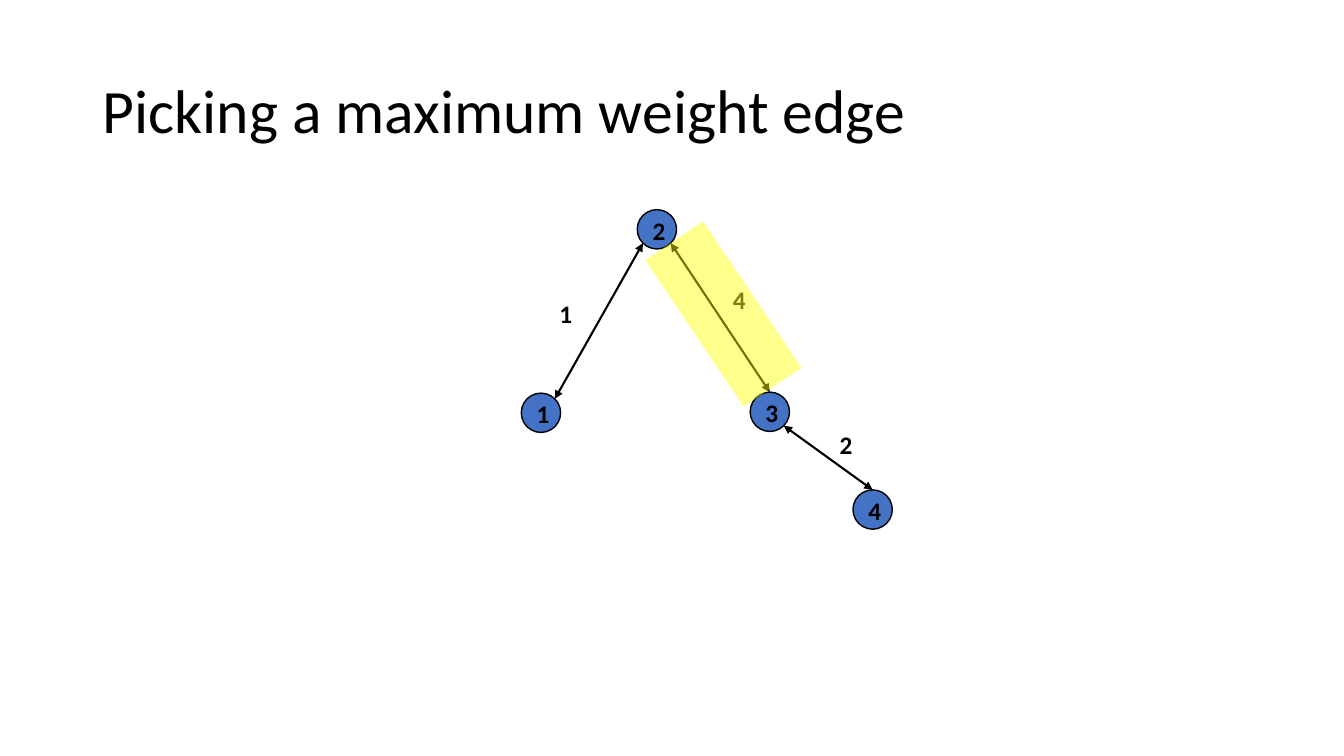
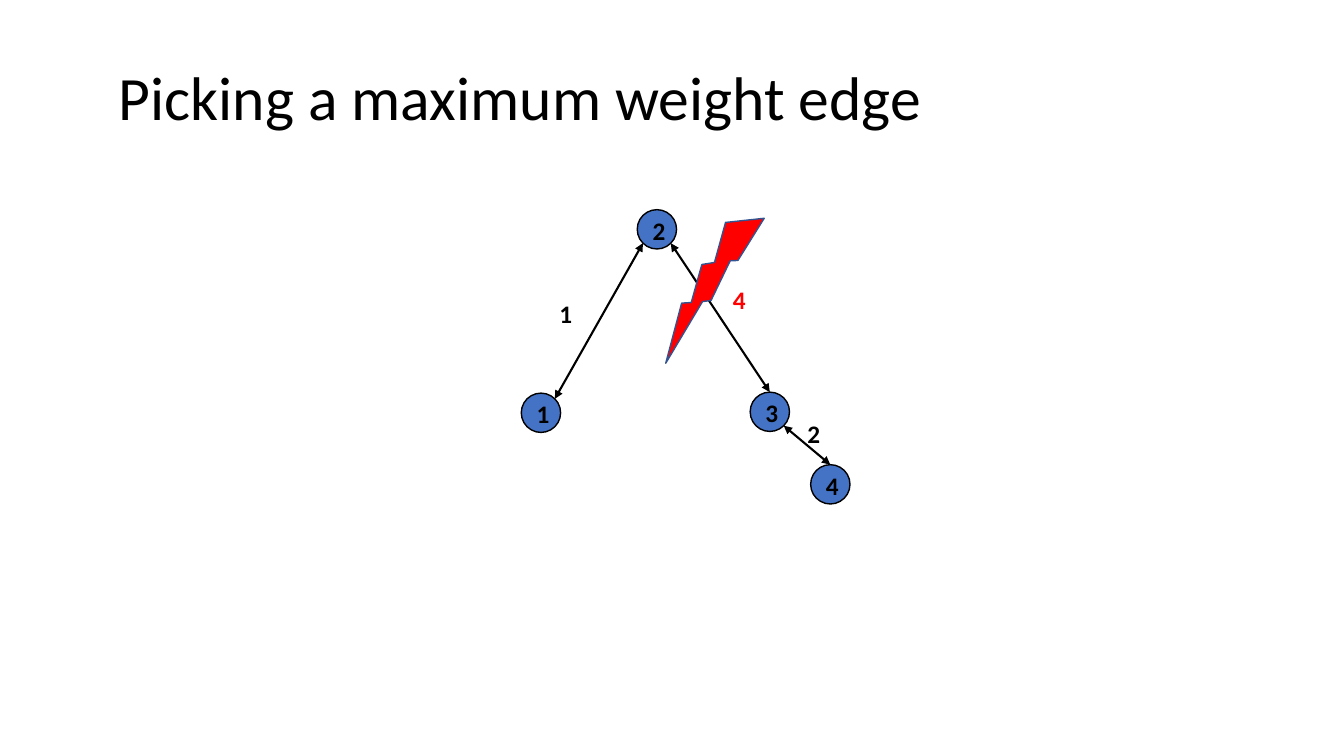
from math import cos, radians, sin

from lxml.etree import SubElement
from pptx import Presentation
from pptx.dml.color import RGBColor
from pptx.enum.shapes import MSO_CONNECTOR as Connector, MSO_SHAPE as Shape
from pptx.enum.text import MSO_ANCHOR as Anchor, PP_ALIGN as Align
from pptx.oxml.ns import qn
from pptx.util import Pt

EMU_PER_PX = 9144
FONT = "Calibri"
TITLE = "Picking a maximum weight edge"
BLACK = RGBColor(0x00, 0x00, 0x00)
CHARCOAL = RGBColor(0x18, 0x17, 0x17)
BLUE = RGBColor(0x44, 0x72, 0xC4)
DARK_BLUE = RGBColor(0x32, 0x54, 0x91)
RED = RGBColor(0xFF, 0x00, 0x00)
YELLOW = RGBColor(0xFF, 0xFF, 0x00)

NODE_SIZE = 39
TOP, UPPER_RIGHT, LOWER_RIGHT, LOWER_LEFT = -90, -45, 45, 135
SHARED_NODES = {"1": (517, 390), "2": (632, 208), "3": (744, 389)}
EDGES = [
    ("3", TOP, "2", LOWER_RIGHT),
    ("1", UPPER_RIGHT, "2", LOWER_LEFT),
    ("4", TOP, "3", LOWER_RIGHT),
]


def px(*lengths):
    return [round(length * EMU_PER_PX) for length in lengths]


def style_text(paragraph, size, color, bold=False):
    font = paragraph.font
    font.name, font.size, font.bold = FONT, Pt(size), bold
    font.color.rgb = color


def add_title_slide(presentation, left, top):
    slide = presentation.slides.add_slide(presentation.slide_layouts[5])
    title = slide.shapes.title
    title.left, title.top, title.width, title.height = px(left, top, 1150, 145)
    frame = title.text_frame
    frame.text = TITLE
    frame.vertical_anchor = Anchor.MIDDLE
    paragraph = frame.paragraphs[0]
    paragraph.alignment = Align.LEFT
    paragraph.line_spacing = 0.9
    style_text(paragraph, 44, BLACK)
    return slide


def add_filled_shape(slide, kind, box, fill, line=None, rotation=0):
    shape = slide.shapes.add_shape(kind, *px(*box))
    shape.shadow.inherit = False
    shape.rotation = rotation
    shape.fill.solid()
    shape.fill.fore_color.rgb = fill
    if line is None:
        shape.line.fill.background()
    else:
        shape.line.color.rgb = line
        shape.line.width = Pt(1)
    return shape


def add_node(slide, name, left, top):
    box = (left, top, NODE_SIZE, NODE_SIZE)
    node = add_filled_shape(slide, Shape.OVAL, box, BLUE, BLACK)
    frame = node.text_frame
    frame.margin_left, frame.margin_top = px(4, 2)
    frame.margin_right = frame.margin_bottom = 0
    frame.vertical_anchor = Anchor.MIDDLE
    frame.text = name
    paragraph = frame.paragraphs[0]
    paragraph.alignment = Align.CENTER
    style_text(paragraph, 18, BLACK, bold=True)


def rim_point(corner, degrees):
    radius = NODE_SIZE / 2
    angle = radians(degrees)
    return (corner[0] + radius * (1 + cos(angle)),
            corner[1] + radius * (1 + sin(angle)))


def add_edge(slide, start, end):
    edge = slide.shapes.add_connector(Connector.STRAIGHT, *px(*start, *end))
    edge.line.color.rgb = BLACK
    edge.line.width = Pt(1.5)
    line = edge.line._get_or_add_ln()
    for arrowhead in ("a:headEnd", "a:tailEnd"):
        SubElement(line, qn(arrowhead), type="triangle")
    SubElement(edge._element.spPr, qn("a:effectLst"))


def add_weight(slide, text, left, top, color=BLACK):
    box = slide.shapes.add_textbox(*px(left, top, 52, 40))
    frame = box.text_frame
    frame.word_wrap = True
    frame.text = text
    style_text(frame.paragraphs[0], 18, color, bold=True)


def add_graph(slide, last_node, last_weight, maximum_color):
    nodes = {**SHARED_NODES, "4": last_node}
    for name, corner in nodes.items():
        add_node(slide, name, *corner)
    for start, start_angle, end, end_angle in EDGES:
        add_edge(slide, rim_point(nodes[start], start_angle),
                 rim_point(nodes[end], end_angle))
    add_weight(slide, "1", 545, 291)
    add_weight(slide, "2", *last_weight)
    add_weight(slide, "4", 717, 277, maximum_color)


def add_highlight(slide):
    band = add_filled_shape(slide, Shape.RECTANGLE, (630, 277, 175, 69),
                            YELLOW, rotation=56.1)
    color = band._element.spPr.find(qn("a:solidFill"))[0]
    SubElement(color, qn("a:alpha"), val="45000")


def main():
    presentation = Presentation()
    presentation.slide_width, presentation.slide_height = px(1333, 750)

    picked = add_title_slide(presentation, 92, 40)
    add_graph(picked, (846, 486), (823, 421), CHARCOAL)
    add_highlight(picked)

    removed = add_title_slide(presentation, 108, 27)
    add_graph(removed, (804, 461), (791, 410), RED)
    add_filled_shape(removed, Shape.LIGHTNING_BOLT, (671, 195, 60, 170),
                     RED, DARK_BLUE, rotation=46.3)

    presentation.save("out.pptx")


if __name__ == "__main__":
    main()
